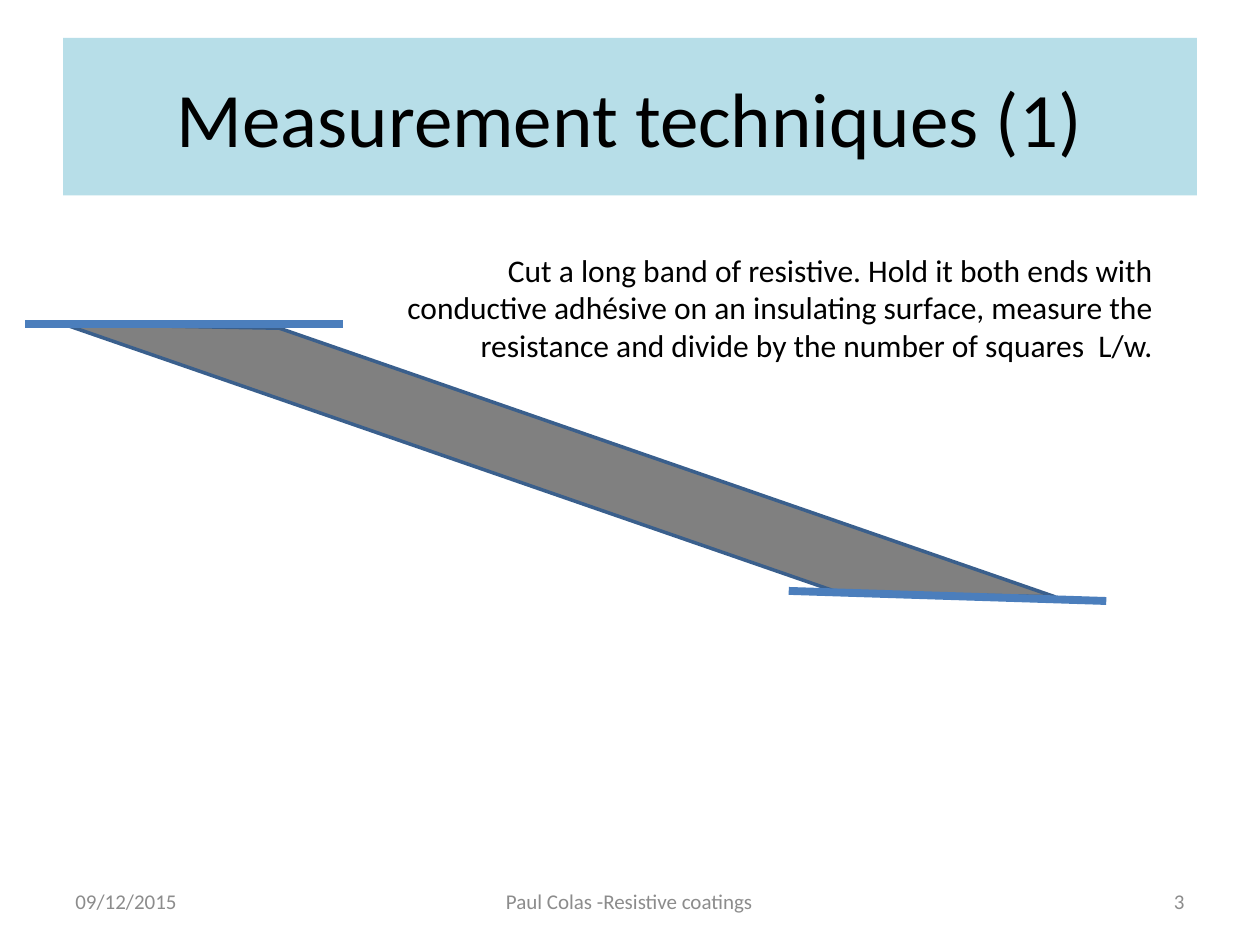
import pptx
import pptx.dml.color
import pptx.enum.shapes
import pptx.enum.text
import pptx.oxml.ns
import pptx.util
from lxml import etree

EMU_PER_PX = 9144  # 100 px to the inch
ALIGN = pptx.enum.text.PP_ALIGN
ANCHOR = pptx.enum.text.MSO_ANCHOR
SHAPES = pptx.enum.shapes.MSO_SHAPE
STRAIGHT = pptx.enum.shapes.MSO_CONNECTOR.STRAIGHT


def px(*lengths):
    return [pptx.util.Emu(length * EMU_PER_PX) for length in lengths]


def color(value):
    return pptx.dml.color.RGBColor.from_string(value)


def paint(fill, value):
    fill.solid()
    fill.fore_color.rgb = color(value)


def place(shape, box):
    for name, value in zip(("left", "top", "width", "height"), px(*box)):
        setattr(shape, name, value)


def write(shape, text, size, ink, align, anchor):
    frame = shape.text_frame
    for name, value in {"word_wrap": True, "vertical_anchor": anchor,
                        "auto_size": pptx.enum.text.MSO_AUTO_SIZE.NONE}.items():
        setattr(frame, name, value)
    para = frame.paragraphs[0]
    para.alignment = align
    span = para.add_run()
    span.text = text
    for name, value in {"name": "Calibri", "size": pptx.util.Pt(size)}.items():
        setattr(span.font, name, value)
    span.font.color.rgb = color(ink)


def add_title(page, box):
    title = page.shapes.title
    place(title, box)
    paint(title.fill, "B7DEE8")
    write(title, "Measurement techniques (1)", 44, "000000", ALIGN.CENTER, ANCHOR.MIDDLE)


def add_text(page, box, text, size, ink, align, anchor):
    label = page.shapes.add_textbox(*px(*box))
    write(label, text, size, ink, align, anchor)


def add_electrode(page, start, end):
    electrode = page.shapes.add_connector(STRAIGHT, *px(*start, *end))
    electrode.line.width = pptx.util.Pt(4.5)
    electrode.line.color.rgb = color("4B7EBC")
    etree.SubElement(electrode._element.spPr, pptx.oxml.ns.qn("a:effectLst"))


def add_band(page, box):
    """Slanted resistive band."""
    band = page.shapes.add_shape(SHAPES.FLOWCHART_DATA, *px(*box))
    band.rotation = 19.1
    band.shadow.inherit = False
    paint(band.fill, "808080")
    band.line.color.rgb = color("3A5F8C")
    band.line.width = pptx.util.Pt(2)


def add_footer(page, box):
    left, top, width, height = box
    parts = [
        ("09/12/2015", 0, 233, ALIGN.LEFT),
        ("Paul Colas -Resistive coatings", (width - 317) // 2, 317, ALIGN.CENTER),
        ("3", width - 233, 233, ALIGN.RIGHT),
    ]
    for text, offset, part_width, align in parts:
        add_text(page, (left + offset, top, part_width, height),
                 text, 12, "8C8C8C", align, ANCHOR.MIDDLE)


def main():
    deck = pptx.Presentation()
    deck.slide_width, deck.slide_height = px(1000, 750)
    page = deck.slides.add_slide(deck.slide_layouts[5])

    add_title(page, (50, 30, 900, 125))

    # Band, explanation and the electrodes holding both ends
    add_band(page, (37, 339, 814, 53))
    add_text(page, (295, 194, 630, 101),
             "Cut a long band of resistive. Hold it both ends with conductive adhésive "
             "on an insulating surface, measure the resistance and divide by the number "
             "of squares  L/w.", 18, "000000", ALIGN.RIGHT, ANCHOR.TOP)
    add_electrode(page, (20, 257), (272, 257))
    add_electrode(page, (626, 469), (878, 477))

    add_footer(page, (50, 695, 900, 40))
    deck.save("out.pptx")


if __name__ == "__main__":
    main()
